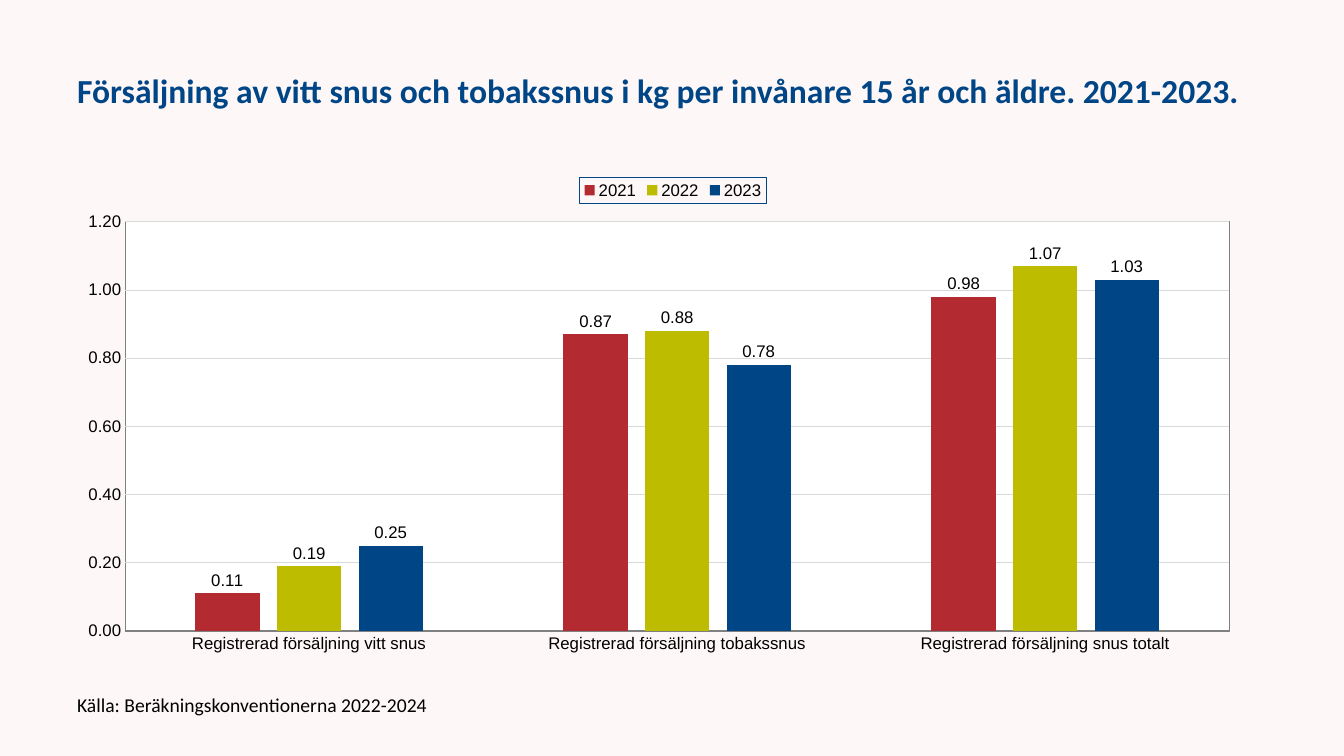
from dataclasses import dataclass

from lxml.etree import SubElement
from pptx import Presentation
from pptx.chart.data import CategoryChartData
from pptx.dml.color import RGBColor
from pptx.enum.chart import XL_CHART_TYPE as ChartType
from pptx.enum.chart import XL_LABEL_POSITION as LabelPosition
from pptx.enum.chart import XL_LEGEND_POSITION as LegendPosition
from pptx.enum.chart import XL_TICK_MARK as TickMark
from pptx.enum.text import MSO_ANCHOR as Anchor
from pptx.enum.text import MSO_AUTO_SIZE as AutoSize
from pptx.enum.text import PP_ALIGN as Align
from pptx.oxml import parse_xml
from pptx.oxml.ns import nsdecls, qn
from pptx.util import Emu, Pt

EMU_PER_PX = 12192000 / 1344


@dataclass(frozen=True)
class Theme:
    background: str = "FEF7F7"
    plot: str = "FFFFFF"
    text: str = "000000"
    title: str = "004687"
    axis: str = "808080"
    grid: str = "D9D9D9"
    years: tuple = ("B32B31", "BEBC00", "004687")
    text_font: str = "Calibri"
    chart_font: str = "Arial"
    title_size: int = 24
    source_size: int = 14
    chart_size: int = 12


THEME = Theme()

CATEGORIES = [
    "Registrerad försäljning vitt snus",
    "Registrerad försäljning tobakssnus",
    "Registrerad försäljning snus totalt",
]
SALES = {
    "2021": (0.11, 0.87, 0.98),
    "2022": (0.19, 0.88, 1.07),
    "2023": (0.25, 0.78, 1.03),
}


def px(length):
    return Emu(round(length * EMU_PER_PX))


def rgb(color):
    return RGBColor.from_string(color)


def format_font(font, name, size, color, bold=False):
    font.name, font.size, font.bold = name, Pt(size), bold
    font.color.rgb = rgb(color)


def fill_placeholder(holder, box, text, *, size, color, bold=False):
    holder.left, holder.top, holder.width, holder.height = map(px, box)
    frame = holder.text_frame
    frame.word_wrap = True
    frame.auto_size = AutoSize.NONE
    frame.vertical_anchor = Anchor.MIDDLE
    paragraph = frame.paragraphs[0]
    properties = paragraph._p.get_or_add_pPr()
    properties.set("marL", "0")
    properties.set("indent", "0")
    SubElement(properties, qn("a:buNone"))
    paragraph.alignment = Align.LEFT
    paragraph.line_spacing = 0.9
    paragraph.space_before = Pt(0)
    run = paragraph.add_run()
    run.text = text
    format_font(run.font, THEME.text_font, size, color, bold)


def style_line(line, color):
    line.color.rgb = rgb(color)
    line.width = Pt(0.75)


def box_properties(line, fill=None):
    """Return chart shape properties with an outline and an optional fill."""
    def solid(color):
        return f'<a:solidFill><a:srgbClr val="{color}"/></a:solidFill>'

    inside = solid(fill) if fill else "<a:noFill/>"
    return parse_xml(
        f'<c:spPr {nsdecls("c", "a")}>{inside}'
        f'<a:ln w="9525">{solid(line)}</a:ln></c:spPr>'
    )


def frame_plot(chart, x, y, w, h):
    """Fix the inner plot area, in fractions of the chart, and fill it."""
    plot_area = chart._chartSpace.chart.plotArea
    for old in plot_area.findall(qn("c:layout")):
        plot_area.remove(old)
    sides = "".join(
        f'<c:{key} val="{value}"/>'
        for key, value in (
            ("layoutTarget", "inner"), ("xMode", "edge"), ("yMode", "edge"),
            ("x", x), ("y", y), ("w", w), ("h", h),
        )
    )
    plot_area.insert(0, parse_xml(
        f'<c:layout {nsdecls("c")}><c:manualLayout>{sides}'
        "</c:manualLayout></c:layout>"
    ))
    plot_area.append(box_properties(THEME.axis, THEME.plot))


def style_axes(chart):
    for axis in (chart.category_axis, chart.value_axis):
        axis.major_tick_mark = axis.minor_tick_mark = TickMark.NONE
        format_font(axis.tick_labels.font, THEME.chart_font,
                    THEME.chart_size, THEME.text)
    style_line(chart.category_axis.format.line, THEME.axis)
    values = chart.value_axis
    values.minimum_scale, values.maximum_scale, values.major_unit = 0, 1.2, 0.2
    values.tick_labels.number_format = "0.00"
    values.tick_labels.number_format_is_linked = False
    values.format.line.fill.background()
    style_line(values.major_gridlines.format.line, THEME.grid)


def style_series(plot):
    plot.gap_width, plot.overlap = 219, -27
    plot.vary_by_categories = False
    for year, color in zip(plot.series, THEME.years):
        year.format.fill.solid()
        year.format.fill.fore_color.rgb = rgb(color)
        year.invert_if_negative = False
        labels = year.data_labels
        labels.show_value = True
        labels.number_format = "0.00"
        labels.number_format_is_linked = False
        labels.position = LabelPosition.OUTSIDE_END
        format_font(labels.font, THEME.chart_font, THEME.chart_size, THEME.text)


def add_legend(chart):
    chart.has_legend = True
    legend = chart.legend
    legend.position = LegendPosition.TOP
    legend.include_in_layout = False
    format_font(legend.font, THEME.chart_font, THEME.chart_size, THEME.text)
    overlay = legend._element.find(qn("c:overlay"))
    overlay.addnext(box_properties(THEME.title))


def add_sales_chart(slide, box):
    data = CategoryChartData(number_format="0.00")
    data.categories = CATEGORIES
    for year, sales in SALES.items():
        data.add_series(year, sales)
    chart = slide.shapes.add_chart(
        ChartType.COLUMN_CLUSTERED, *map(px, box), data).chart
    chart.has_title = False
    format_font(chart.font, THEME.chart_font, THEME.chart_size, THEME.text)
    style_axes(chart)
    style_series(chart.plots[0])
    add_legend(chart)
    frame_plot(chart, 0.048, 0.104, 0.911, 0.82)


def build_sales_slide(deck):
    slide = deck.slides.add_slide(deck.slide_layouts[1])
    slide.background.fill.solid()
    slide.background.fill.fore_color.rgb = rgb(THEME.background)
    fill_placeholder(
        slide.shapes.title, (67, 30, 1210, 126),
        "Försäljning av vitt snus och tobakssnus i kg per invånare "
        "15 år och äldre. 2021-2023.",
        size=THEME.title_size, color=THEME.title, bold=True)
    add_sales_chart(slide, (67, 170, 1212, 499))
    fill_placeholder(
        slide.placeholders[1], (67, 688, 605, 37),
        "Källa: Beräkningskonventionerna 2022-2024",
        size=THEME.source_size, color=THEME.text)


def main():
    deck = Presentation()
    deck.slide_width, deck.slide_height = px(1344), px(756)
    build_sales_slide(deck)
    deck.save("out.pptx")


if __name__ == "__main__":
    main()
